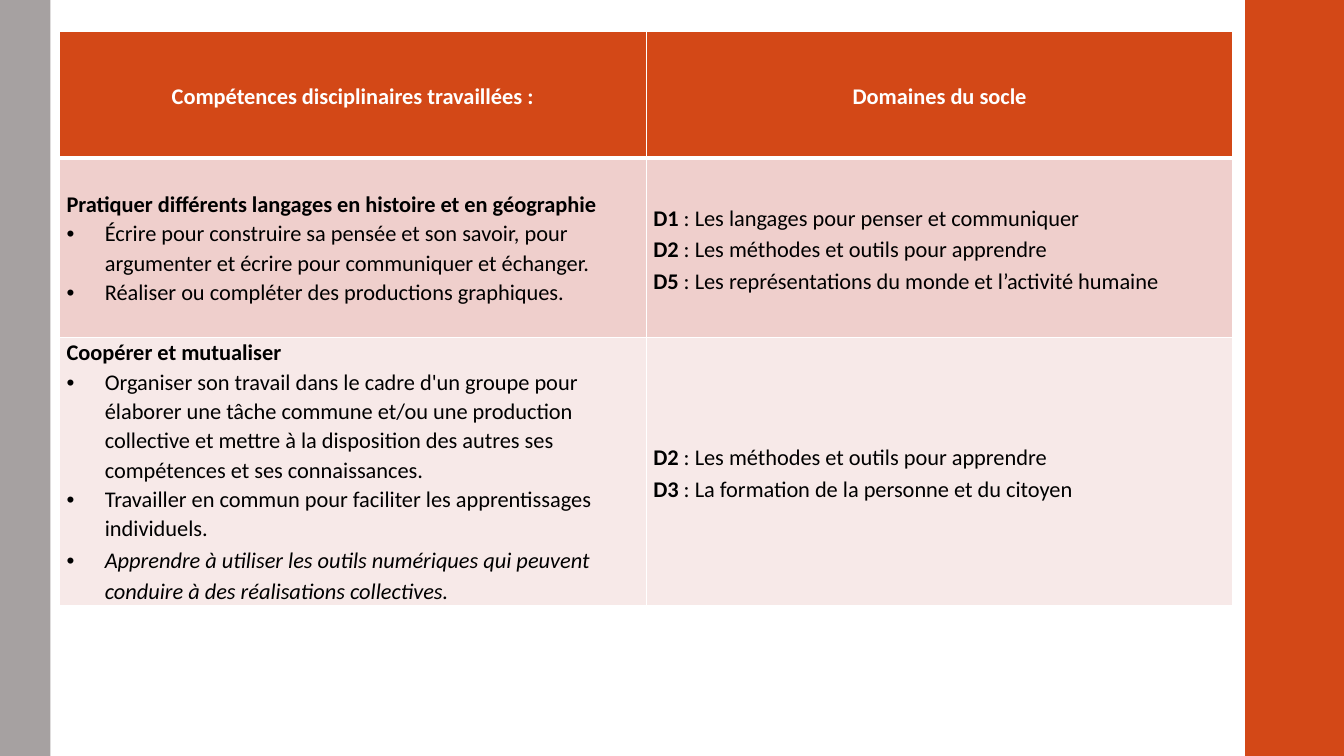
from dataclasses import dataclass

from pptx import Presentation
from pptx.dml.color import RGBColor
from pptx.enum.shapes import MSO_SHAPE
from pptx.enum.text import MSO_ANCHOR, PP_ALIGN
from pptx.oxml import parse_xml
from pptx.oxml.ns import nsdecls
from pptx.util import Inches, Pt


@dataclass(frozen=True)
class Theme:
    font: str = "Calibri"
    size: int = 16
    accent: str = "D34817"
    side: str = "A6A1A1"
    light: str = "FFFFFF"
    dark: str = "000000"
    bands: tuple = ("EFCFCC", "F7E9E8")
    tight: float = 1.07
    loose: float = 1.15


THEME = Theme()
WIDTH, HEIGHT = 13.33, 7.5
BULLET_INDENT = 0.38
ROW_HEIGHTS = (1.26, 1.78, 2.66)

HEADERS = ("Compétences disciplinaires travaillées :", "Domaines du socle")

# Each row: skill heading, its bullets (text, italic), then its domains (code, label)
ROWS = (
    ("Pratiquer différents langages en histoire et en géographie",
     (("Écrire pour construire sa pensée et son savoir, pour argumenter et écrire "
       "pour communiquer et échanger.", False),
      ("Réaliser ou compléter des productions graphiques.", False)),
     (("D1", "Les langages pour penser et communiquer"),
      ("D2", "Les méthodes et outils pour apprendre"),
      ("D5", "Les représentations du monde et l’activité humaine"))),
    ("Coopérer et mutualiser",
     (("Organiser son travail dans le cadre d'un groupe pour élaborer une tâche commune "
       "et/ou une production collective et mettre à la disposition des autres ses "
       "compétences et ses connaissances.", False),
      ("Travailler en commun pour faciliter les apprentissages individuels.", False),
      ("Apprendre à utiliser les outils numériques qui peuvent conduire à des "
       "réalisations collectives.", True)),
     (("D2", "Les méthodes et outils pour apprendre"),
      ("D3", "La formation de la personne et du citoyen"))),
)


def add_span(para, text, bold=False, italic=False, color=THEME.dark):
    span = para.add_run()
    span.text = text
    span.font.name = THEME.font
    span.font.size = Pt(THEME.size)
    span.font.bold = bold
    span.font.italic = italic
    span.font.color.rgb = RGBColor.from_string(color)


def add_para(frame, first=False, align=PP_ALIGN.LEFT, spacing=THEME.loose, bullet=False):
    para = frame.paragraphs[0] if first else frame.add_paragraph()
    para.alignment = align
    para.line_spacing = spacing
    if bullet:
        properties = para._p.get_or_add_pPr()
        properties.set("marL", str(Inches(BULLET_INDENT)))
        properties.set("indent", str(-Inches(BULLET_INDENT)))
        properties.append(parse_xml(f'<a:buFont {nsdecls("a")} typeface="Arial"/>'))
        properties.append(parse_xml(f'<a:buChar {nsdecls("a")} char="•"/>'))
    return para


def style_cell(cell, fill, top=1, bottom=1):
    cell.fill.solid()
    cell.fill.fore_color.rgb = RGBColor.from_string(fill)
    cell.vertical_anchor = MSO_ANCHOR.MIDDLE
    cell.margin_left = cell.margin_right = Inches(0.07)
    cell.margin_top = cell.margin_bottom = 0
    # Borders come before the fill in the cell properties
    properties = cell._tc.get_or_add_tcPr()
    edges = (("lnL", 1), ("lnR", 1), ("lnT", top), ("lnB", bottom))
    for place, (edge, width) in enumerate(edges):
        properties.insert(place, parse_xml(
            f'<a:{edge} {nsdecls("a")} w="{Pt(width)}"><a:solidFill>'
            f'<a:srgbClr val="{THEME.light}"/></a:solidFill></a:{edge}>'))


def add_bar(page, left, width, color):
    bar = page.shapes.add_shape(MSO_SHAPE.RECTANGLE, Inches(left), 0,
                                Inches(width), Inches(HEIGHT))
    bar.shadow.inherit = False
    bar.fill.solid()
    bar.fill.fore_color.rgb = RGBColor.from_string(color)
    bar.line.fill.background()


def fill_skills(frame, heading, bullets):
    add_span(add_para(frame, first=True, spacing=THEME.tight), heading, bold=True)
    for text, italic in bullets:
        spacing = THEME.loose if italic else THEME.tight
        add_span(add_para(frame, spacing=spacing, bullet=True), text, italic=italic)


def fill_domains(frame, domains):
    for index, (code, label) in enumerate(domains):
        para = add_para(frame, first=index == 0, align=PP_ALIGN.JUSTIFY)
        add_span(para, code, bold=True)
        add_span(para, f" : {label}")


def add_skills_table(page, left, top, width):
    box = page.shapes.add_table(len(ROW_HEIGHTS), len(HEADERS), Inches(left), Inches(top),
                                Inches(width), Inches(sum(ROW_HEIGHTS)))
    table = box.table
    table.horz_banding = False
    for row, height in zip(table.rows, ROW_HEIGHTS):
        row.height = Inches(height)

    # Header row
    for column, title in enumerate(HEADERS):
        cell = table.cell(0, column)
        style_cell(cell, THEME.accent, bottom=3)
        para = add_para(cell.text_frame, first=True, align=PP_ALIGN.CENTER)
        add_span(para, title, bold=True, color=THEME.light)

    # Skills on the left, domains on the right
    for index, (heading, bullets, domains) in enumerate(ROWS):
        skills, domain = table.cell(index + 1, 0), table.cell(index + 1, 1)
        for cell in (skills, domain):
            style_cell(cell, THEME.bands[index], top=3 if index == 0 else 1)
        fill_skills(skills.text_frame, heading, bullets)
        fill_domains(domain.text_frame, domains)


def main():
    deck = Presentation()
    deck.slide_width, deck.slide_height = Inches(WIDTH), Inches(HEIGHT)
    page = deck.slides.add_slide(deck.slide_layouts[6])
    # Side bars
    add_bar(page, WIDTH - 0.98, 0.98, THEME.accent)
    add_bar(page, 0, 0.5, THEME.side)
    # Skills and domains
    add_skills_table(page, left=0.59, top=0.31, width=11.64)
    deck.save("out.pptx")


if __name__ == "__main__":
    main()
